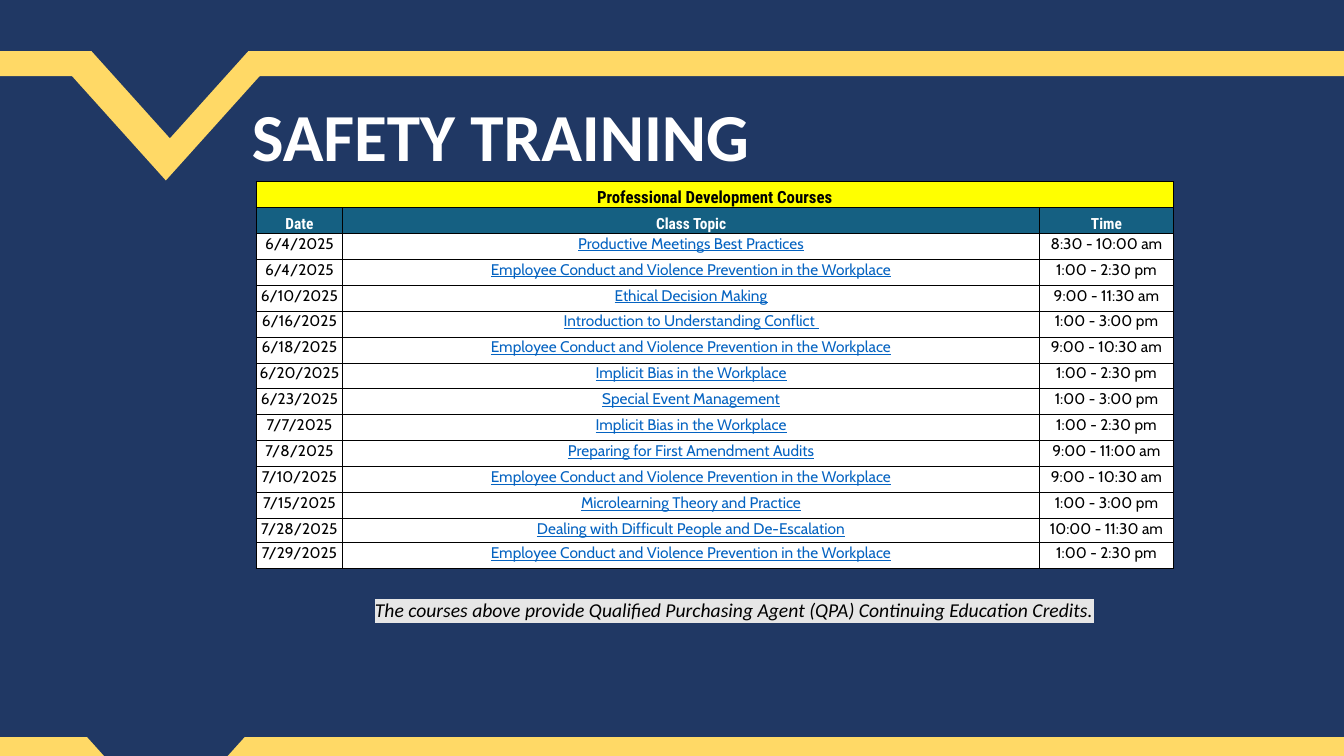
from lxml.etree import SubElement
from pptx import Presentation
from pptx.dml.color import RGBColor
from pptx.enum.shapes import MSO_SHAPE
from pptx.enum.text import MSO_ANCHOR, MSO_AUTO_SIZE, PP_ALIGN
from pptx.oxml import parse_xml
from pptx.oxml.ns import nsdecls, qn
from pptx.util import Inches, Pt

NAVY, GOLD, BLACK, WHITE = "203864", "FFD966", "000000", "FFFFFF"
YELLOW, TEAL, LINK, GREY = "FFFF00", "156082", "0563C1", "E6E6E6"
SLIDE_WIDTH, SLIDE_HEIGHT = 13.33, 7.5

TITLE = "SAFETY TRAINING"
NOTE = "The courses above provide Qualified Purchasing Agent (QPA) Continuing Education Credits."
TABLE_TITLE = "Professional Development Courses"
HEADINGS = ("Date", "Class Topic", "Time")
CONDUCT = "Employee Conduct and Violence Prevention in the Workplace"
BIAS = "Implicit Bias in the Workplace"
COURSES = [
    ("6/4/2025", "Productive Meetings Best Practices", "8:30 - 10:00 am"),
    ("6/4/2025", CONDUCT, "1:00 - 2:30 pm"),
    ("6/10/2025", "Ethical Decision Making", "9:00 - 11:30 am"),
    ("6/16/2025", "Introduction to Understanding Conflict ", "1:00 - 3:00 pm"),
    ("6/18/2025", CONDUCT, "9:00 - 10:30 am"),
    ("6/20/2025", BIAS, "1:00 - 2:30 pm"),
    ("6/23/2025", "Special Event Management", "1:00 - 3:00 pm"),
    ("7/7/2025", BIAS, "1:00 - 2:30 pm"),
    ("7/8/2025", "Preparing for First Amendment Audits", "9:00 - 11:00 am"),
    ("7/10/2025", CONDUCT, "9:00 - 10:30 am"),
    ("7/15/2025", "Microlearning Theory and Practice", "1:00 - 3:00 pm"),
    ("7/28/2025", "Dealing with Difficult People and De-Escalation", "10:00 - 11:30 am"),
    ("7/29/2025", CONDUCT, "1:00 - 2:30 pm"),
]
COLUMN_WIDTHS = (0.86, 6.91, 1.33)
TABLE_LEFT, TABLE_TOP, TABLE_HEIGHT = 2.54, 1.8, 3.84
SHORT_ROW, SHORT_HEIGHT = 13, 0.24
LAYERS = [
    (SLIDE_HEIGHT, GOLD, None),
    (7.31, NAVY, (0.71, 7.14)),
    (0.755, GOLD, (0.71, 0.75)),
    (0.505, NAVY, (0.75, 0.33)),
]


def paint(target, color):
    target.solid()
    target.fore_color.rgb = RGBColor.from_string(color)


def add_preset(slide, preset, left, top, width, height, color):
    shape = slide.shapes.add_shape(preset, Inches(left), Inches(top), Inches(width), Inches(height))
    paint(shape.fill, color)
    shape.line.fill.background()
    shape.shadow.inherit = False
    return shape


def add_run(paragraph, text, font, size, color, bold=False, italic=False, underline=False):
    run = paragraph.add_run()
    run.text = text
    run.font.name, run.font.size = font, Pt(size)
    run.font.bold, run.font.italic, run.font.underline = bold, italic, underline
    paint(run.font.fill, color)
    return run


def add_text(slide, left, top, width, height, wrap, text, **style):
    box = slide.shapes.add_textbox(Inches(left), Inches(top), Inches(width), Inches(height))
    box.text_frame.word_wrap = wrap
    box.text_frame.auto_size = MSO_AUTO_SIZE.SHAPE_TO_FIT_TEXT
    return add_run(box.text_frame.paragraphs[0], text, **style)


def highlight(run, color):
    fill = run.font._element.find(qn("a:solidFill"))
    mark = parse_xml(f"<a:highlight {nsdecls('a')}/>")
    SubElement(mark, qn("a:srgbClr"), val=color)
    fill.addnext(mark)


def set_borders(cell, widths):
    properties = cell._tc.get_or_add_tcPr()
    for index, (side, width) in enumerate(zip("LRTB", widths)):
        border = parse_xml(f'<a:ln{side} {nsdecls("a")} w="{Pt(width)}"/>')
        SubElement(SubElement(border, qn("a:solidFill")), qn("a:srgbClr"), val=BLACK)
        properties.insert(index, border)


def add_courses(slide):
    rows = [(TABLE_TITLE, "", ""), HEADINGS] + COURSES
    last_row, last_column = len(rows) - 1, len(HEADINGS) - 1
    row_height = (TABLE_HEIGHT - SHORT_HEIGHT) / last_row
    table = slide.shapes.add_table(
        len(rows), len(HEADINGS), Inches(TABLE_LEFT), Inches(TABLE_TOP),
        Inches(sum(COLUMN_WIDTHS)), Inches(TABLE_HEIGHT)).table
    for column, width in zip(table.columns, COLUMN_WIDTHS):
        column.width = Inches(width)
    table.cell(0, 0).merge(table.cell(0, last_column))
    for r, row in enumerate(rows):
        table.rows[r].height = Inches(SHORT_HEIGHT if r == SHORT_ROW else row_height)
        for c, text in enumerate(row):
            cell = table.cell(r, c)
            heading = r < 2
            cell.margin_left = cell.margin_right = cell.margin_top = Inches(0.01)
            cell.margin_bottom = 0
            cell.vertical_anchor = MSO_ANCHOR.BOTTOM if heading else MSO_ANCHOR.TOP
            paint(cell.fill, (YELLOW, TEAL)[r] if heading else WHITE)
            outer = (c == 0, c == last_column, r == 0, r == last_row)
            set_borders(cell, [1 if edge else 0.5 for edge in outer])
            if not text:
                continue
            paragraph = cell.text_frame.paragraphs[0]
            paragraph.alignment = PP_ALIGN.CENTER
            if heading:
                add_run(paragraph, text, "Roboto Condensed", (12, 11)[r], (BLACK, WHITE)[r], bold=True)
            else:
                topic = c == 1
                add_run(paragraph, text, "Cabin", 11, LINK if topic else BLACK, underline=topic)


def main():
    presentation = Presentation()
    presentation.slide_width = Inches(SLIDE_WIDTH)
    presentation.slide_height = Inches(SLIDE_HEIGHT)
    slide = presentation.slides.add_slide(presentation.slide_layouts[6])

    for bottom, color, notch in LAYERS:
        add_preset(slide, MSO_SHAPE.RECTANGLE, 0, 0, SLIDE_WIDTH, bottom, color)
        if notch:
            add_preset(slide, MSO_SHAPE.ISOSCELES_TRIANGLE, *notch, 1.87, 1.04, color).rotation = 180

    add_text(slide, 2.4, 0.89, 8.77, 0.91, True, TITLE,
             font="Calibri", size=48, color=WHITE, bold=True)
    add_courses(slide)
    note = add_text(slide, 3.62, 5.88, 7.4, 0.34, False, NOTE,
                    font="Calibri", size=14, color=BLACK, italic=True)
    highlight(note, GREY)
    presentation.save("out.pptx")


if __name__ == "__main__":
    main()
